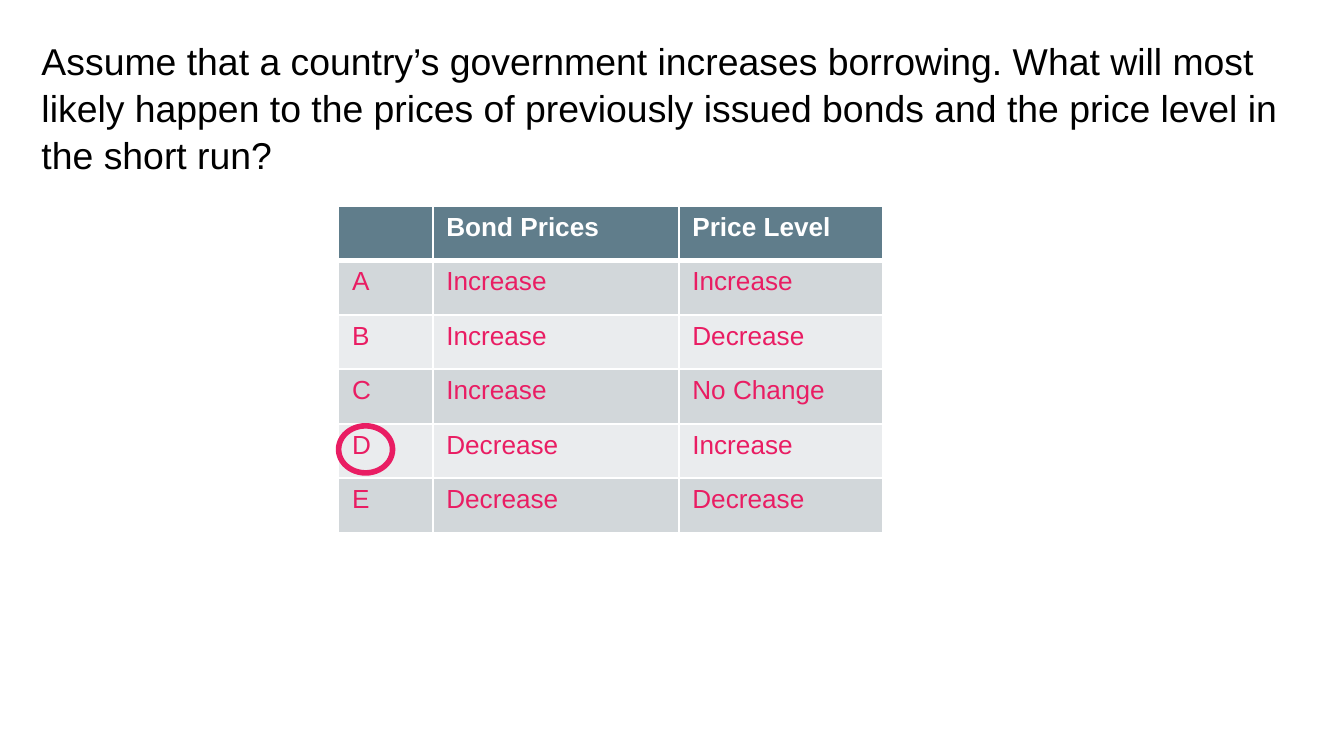
from lxml import etree
from pptx import Presentation
from pptx import util as u
from pptx.dml.color import RGBColor
from pptx.enum import shapes, text
from pptx.oxml.ns import qn

COLORS = {"ink": "000000", "white": "FFFFFF", "accent": "E91D63",
          "header": "607D8B", "odd": "D2D7DA", "even": "EAECEE"}
ROWS = [
    ("", "Bond Prices", "Price Level"),
    ("A", "Increase", "Increase"),
    ("B", "Increase", "Decrease"),
    ("C", "Increase", "No Change"),
    ("D", "Decrease", "Increase"),
    ("E", "Decrease", "Decrease"),
]


class QuizSlide:
    """Holds the style and the current slide, and draws its elements."""

    font = "Arial"

    def __init__(self, prs):
        self.s = prs.slides.add_slide(prs.slide_layouts[5])

    def color(self, name):
        return RGBColor.from_string(COLORS[name])

    def format(self, p, size, color, bold=False):
        for r in p.runs:
            r.font.name, r.font.size, r.font.bold = self.font, u.Pt(size), bold
            r.font.color.rgb = self.color(color)

    def title(self, words, x, y, w, h):
        sp = self.s.shapes.title
        sp.left, sp.top, sp.width, sp.height = map(u.Cm, (x, y, w, h))
        tf = sp.text_frame
        tf.text = words
        tf.word_wrap = True
        tf.auto_size = text.MSO_AUTO_SIZE.NONE
        tf.vertical_anchor = text.MSO_ANCHOR.TOP
        p = tf.paragraphs[0]
        p.alignment = text.PP_ALIGN.LEFT
        p.line_spacing = 1.05
        self.format(p, 20, "ink")

    def border(self, cell, side, width):
        ln = etree.SubElement(cell._tc.get_or_add_tcPr(), qn(f"a:ln{side}"), w=str(u.Pt(width)))
        fill = etree.SubElement(ln, qn("a:solidFill"))
        etree.SubElement(fill, qn("a:srgbClr"), val=COLORS["white"])

    def table(self, rows, x, y, widths, row_height):
        frame = self.s.shapes.add_table(len(rows), len(widths), u.Cm(x), u.Cm(y),
                                        u.Cm(sum(widths)), u.Cm(row_height * len(rows)))
        for column, width in zip(frame.table.columns, widths):
            column.width = u.Cm(width)
        for i, row in enumerate(rows):
            frame.table.rows[i].height = u.Cm(row_height)
            for j, words in enumerate(row):
                cell = frame.table.cell(i, j)
                for side in "LRTB":
                    self.border(cell, side, 3 if (i, side) in ((0, "B"), (1, "T")) else 1)
                cell.fill.solid()
                fill = "header" if i == 0 else "odd" if i % 2 else "even"
                cell.fill.fore_color.rgb = self.color(fill)
                cell.text_frame.text = words
                self.format(cell.text_frame.paragraphs[0], 14,
                            "accent" if i else "white", bold=i == 0)

    def ring(self, x, y, w, h):
        sp = self.s.shapes.add_shape(shapes.MSO_SHAPE.OVAL, *map(u.Cm, (x, y, w, h)))
        sp.shadow.inherit = False
        sp.fill.background()
        sp.line.color.rgb = self.color("accent")
        sp.line.width = u.Pt(3)


def main():
    prs = Presentation()
    prs.slide_width, prs.slide_height = u.Cm(25.4), u.Cm(14.29)
    quiz = QuizSlide(prs)
    quiz.title("Assume that a country’s government increases borrowing. What will most "
               "likely happen to the prices of previously issued bonds and the price "
               "level in the short run?", 0.53, 0.56, 24.87, 5.82)
    quiz.table(ROWS, 6.4, 3.89, (1.78, 4.65, 3.86), 1.03)
    quiz.ring(6.4, 8.05, 1.02, 0.89)
    prs.save("out.pptx")


if __name__ == "__main__":
    main()
